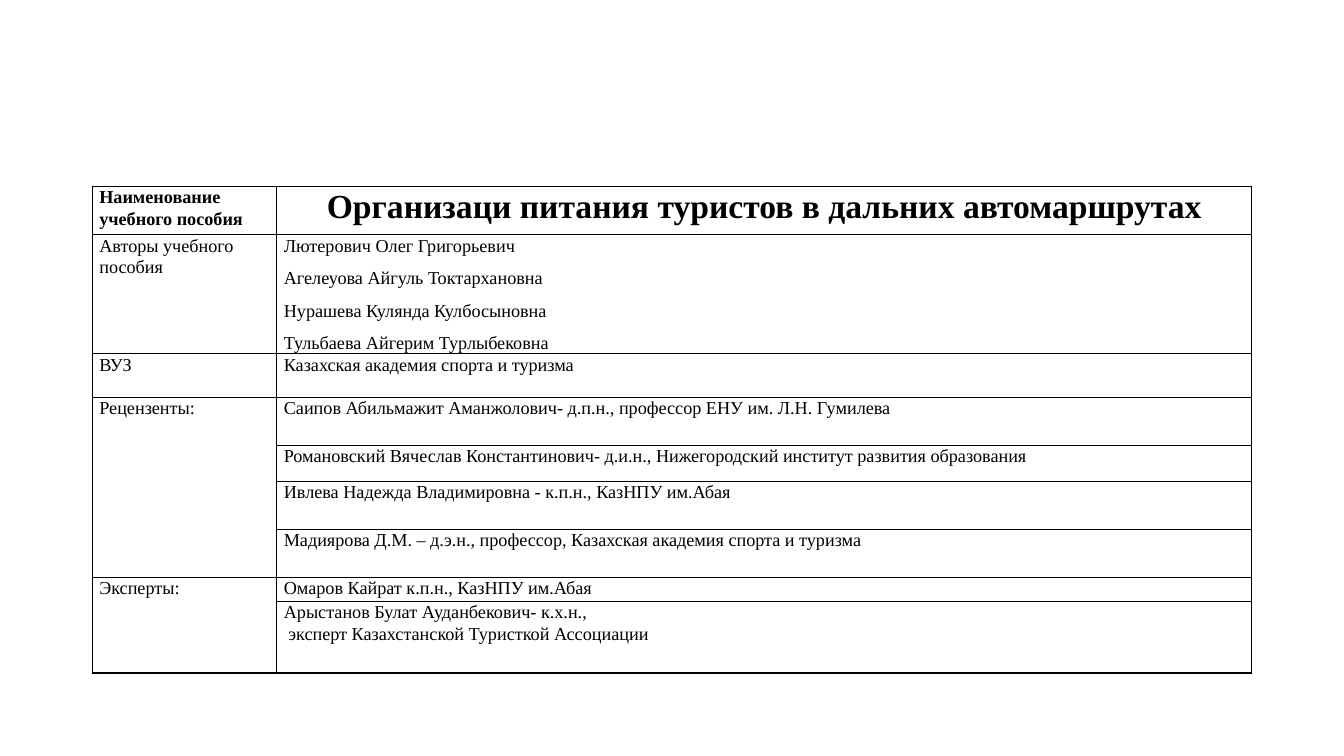
"""Build a slide with a table describing a textbook, its authors and reviewers."""
from lxml import etree
from pptx import Presentation
from pptx.dml.color import RGBColor
from pptx.enum.text import PP_ALIGN
from pptx.oxml.ns import qn
from pptx.util import Pt

BLACK = RGBColor(0, 0, 0)
LEFT, CENTER = PP_ALIGN.LEFT, PP_ALIGN.CENTER
FONT = "Times New Roman"

COLUMNS = [131.8, 696.2]
ROWS = [
    (34.6, "Наименование учебного пособия",
     ["Организаци питания туристов в дальних автомаршрутах"]),
    (84.6, "Авторы учебного пособия",
     ["Лютерович Олег Григорьевич", "Агелеуова Айгуль Токтархановна",
      "Нурашева Кулянда Кулбосыновна", "Тульбаева Айгерим Турлыбековна"]),
    (31, "ВУЗ", ["Казахская академия спорта и туризма"]),
    (34.3, "Рецензенты:",
     ["Саипов Абильмажит Аманжолович- д.п.н., профессор ЕНУ им. Л.Н. Гумилева"]),
    (25.7, None,
     ["Романовский Вячеслав Константинович- д.и.н., "
      "Нижегородский институт развития образования"]),
    (34.3, None, ["Ивлева Надежда Владимировна - к.п.н., КазНПУ им.Абая"]),
    (34.3, None,
     ["Мадиярова Д.М. – д.э.н., профессор, Казахская академия спорта и туризма"]),
    (17.1, "Эксперты:", ["Омаров Кайрат к.п.н., КазНПУ им.Абая"]),
    (51.4, None,
     ["Арыстанов Булат Ауданбекович- к.х.н.,",
      " эксперт Казахстанской Туристкой Ассоциации"]),
]
FIRST_TIGHT_ROW = 6


def write(cell, lines, size=13, bold=False, align=LEFT, after=8):
    tf = cell.text_frame
    for i, line in enumerate(lines):
        p = tf.paragraphs[0] if i == 0 else tf.add_paragraph()
        p.alignment = align
        p.line_spacing = 1.07
        p.space_after = Pt(after)
        r = p.add_run()
        r.text = line
        r.font.name = FONT
        r.font.size = Pt(size)
        r.font.bold = bold
        r.font.color.rgb = BLACK


def add_borders(cell):
    tcPr = cell._tc.get_or_add_tcPr()
    for i, side in enumerate(("a:lnL", "a:lnR", "a:lnT", "a:lnB")):
        ln = etree.Element(qn(side), w=str(Pt(1)))
        fill = etree.SubElement(ln, qn("a:solidFill"))
        etree.SubElement(fill, qn("a:srgbClr"), val=str(BLACK))
        tcPr.insert(i, ln)


prs = Presentation()
prs.slide_width, prs.slide_height = Pt(960), Pt(540)
s = prs.slides.add_slide(prs.slide_layouts[6])

heights = [row[0] for row in ROWS]
table = s.shapes.add_table(len(ROWS), len(COLUMNS), Pt(66), Pt(133),
                           Pt(sum(COLUMNS)), Pt(sum(heights))).table
table.first_row = False
table.horz_banding = False
for column, width in zip(table.columns, COLUMNS):
    column.width = Pt(width)
for row, height in zip(table.rows, heights):
    row.height = Pt(height)

for cell in table.iter_cells():
    cell.margin_left = cell.margin_right = Pt(5)
    cell.margin_top = cell.margin_bottom = 0
    cell.fill.background()
    add_borders(cell)

for first, last in ((3, 6), (7, 8)):
    table.cell(first, 0).merge(table.cell(last, 0))

for i, (height, label, lines) in enumerate(ROWS):
    title = i == 0
    if label:
        write(table.cell(i, 0), [label], bold=title)
    write(table.cell(i, 1), lines, size=24 if title else 13, bold=title,
          align=CENTER if title else LEFT, after=0 if i >= FIRST_TIGHT_ROW else 8)

prs.save("out.pptx")
